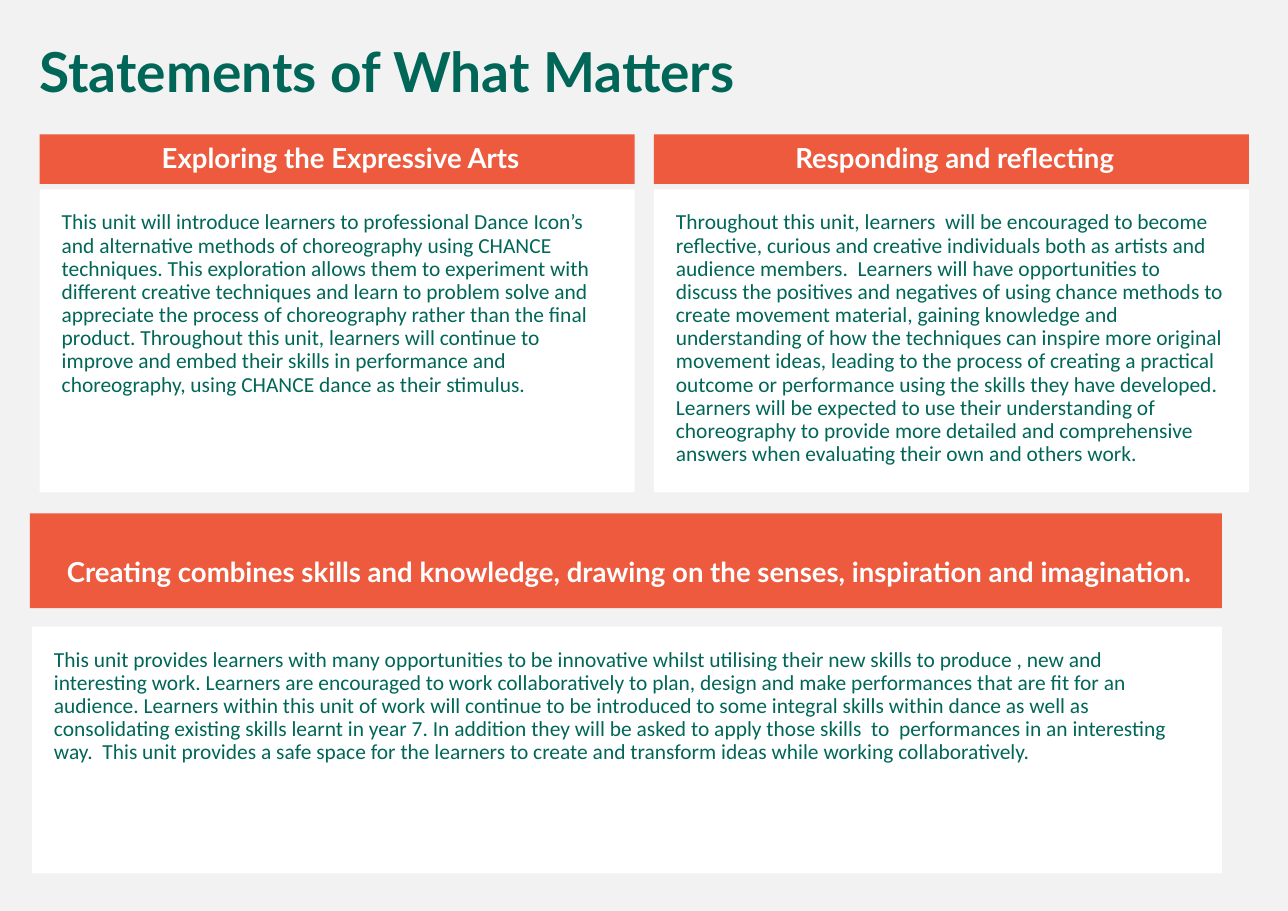
import pptx
import pptx.util
import pptx.dml.color
import pptx.enum.shapes
import pptx.enum.text

GREEN = pptx.dml.color.RGBColor(0x00, 0x67, 0x58)
ORANGE = pptx.dml.color.RGBColor(0xED, 0x5A, 0x3E)
WHITE = pptx.dml.color.RGBColor(0xFF, 0xFF, 0xFF)
PALE_GREY = pptx.dml.color.RGBColor(0xF2, 0xF2, 0xF2)

SLIDE_WIDTH = pptx.util.Inches(11.69)
SLIDE_HEIGHT = pptx.util.Inches(8.27)

EXPLORING = (
    "This unit will introduce learners to professional Dance Icon’s and alternative methods of "
    "choreography using CHANCE techniques. This exploration allows them to experiment with "
    "different creative techniques and learn to problem solve and appreciate the process of "
    "choreography rather than the final product. Throughout this unit, learners will continue to "
    "improve and embed their skills in performance and choreography, using CHANCE dance as their "
    "stimulus."
)
RESPONDING = (
    "Throughout this unit, learners  will be encouraged to become reflective, curious and creative "
    "individuals both as artists and audience members.  Learners will have opportunities to discuss "
    "the positives and negatives of using chance methods to create movement material, gaining "
    "knowledge and understanding of how the techniques can inspire more original movement ideas, "
    "leading to the process of creating a practical outcome or performance using the skills they "
    "have developed. Learners will be expected to use their understanding of choreography to provide "
    "more detailed and comprehensive answers when evaluating their own and others work."
)
CREATING = (
    "This unit provides learners with many opportunities to be innovative whilst utilising their new "
    "skills to produce , new and interesting work. Learners are encouraged to work collaboratively to "
    "plan, design and make performances that are fit for an audience. Learners within this unit of "
    "work will continue to be introduced to some integral skills within dance as well as "
    "consolidating existing skills learnt in year 7. In addition they will be asked to apply those "
    "skills  to  performances in an interesting way.  This unit provides a safe space for the learners "
    "to create and transform ideas while working collaboratively."
)


def place(left, top, width, height):
    return (
        round(SLIDE_WIDTH * left / 100),
        round(SLIDE_HEIGHT * top / 100),
        round(SLIDE_WIDTH * width / 100),
        round(SLIDE_HEIGHT * height / 100),
    )


def write(shape, text, font_name, size, color, bold, alignment, anchor, insets):
    frame = shape.text_frame
    frame.word_wrap = True
    frame.vertical_anchor = anchor
    frame.margin_left, frame.margin_top, frame.margin_right, frame.margin_bottom = map(
        pptx.util.Inches, insets
    )
    paragraph = frame.paragraphs[0]
    paragraph.text = text
    paragraph.alignment = alignment
    paragraph.line_spacing = 0.9
    paragraph.font.name = font_name
    paragraph.font.size = pptx.util.Pt(size)
    paragraph.font.bold = bold
    paragraph.font.color.rgb = color


def add_block(slide, box, fill):
    shape = slide.shapes.add_shape(pptx.enum.shapes.MSO_SHAPE.RECTANGLE, *place(*box))
    shape.shadow.inherit = False
    shape.fill.solid()
    shape.fill.fore_color.rgb = fill
    shape.line.fill.background()
    return shape


def add_title(slide, box, text):
    write(slide.shapes.add_textbox(*place(*box)), text, "Lato", 36, GREEN, True,
          pptx.enum.text.PP_ALIGN.LEFT, pptx.enum.text.MSO_ANCHOR.TOP, (0.1, 0.05, 0.1, 0.05))


def add_panel(slide, box, heading, body, heading_height, gap, heading_inset=0.05, body_indent=0):
    left, top, width, height = box
    offset = heading_height + gap
    write(add_block(slide, (left, top, width, heading_height), ORANGE),
          heading, "Lato", 18, WHITE, True, pptx.enum.text.PP_ALIGN.CENTER,
          pptx.enum.text.MSO_ANCHOR.MIDDLE, (0.16, heading_inset, 0.1, 0.05))
    body_box = (left + body_indent, top + offset, width - body_indent, height - offset)
    write(add_block(slide, body_box, WHITE),
          body, "Calibri", 14, GREEN, False, pptx.enum.text.PP_ALIGN.LEFT,
          pptx.enum.text.MSO_ANCHOR.TOP, (0.2, 0.2, 0.2, 0.2))


def main():
    presentation = pptx.Presentation()
    presentation.slide_width = SLIDE_WIDTH
    presentation.slide_height = SLIDE_HEIGHT
    slide = presentation.slides.add_slide(presentation.slide_layouts[6])
    slide.background.fill.solid()
    slide.background.fill.fore_color.rgb = PALE_GREY

    add_title(slide, (2.22, 4.35, 94.78, 7.86), "Statements of What Matters")

    column_left, column_width, column_gap = 3.08, 46.19, 1.5
    columns = (("Exploring the Expressive Arts", EXPLORING), ("Responding and reflecting", RESPONDING))
    for index, (heading, body) in enumerate(columns):
        left = column_left + index * (column_width + column_gap)
        add_panel(slide, (left, 14.75, column_width, 39.3), heading, body, 5.44, 0.6)

    add_panel(
        slide,
        (2.31, 56.35, 92.56, 39.54),
        "Creating combines skills and knowledge, drawing on the senses, inspiration and imagination.",
        CREATING,
        10.4,
        2.05,
        heading_inset=0.29,
        body_indent=0.17,
    )
    presentation.save("out.pptx")


if __name__ == "__main__":
    main()
